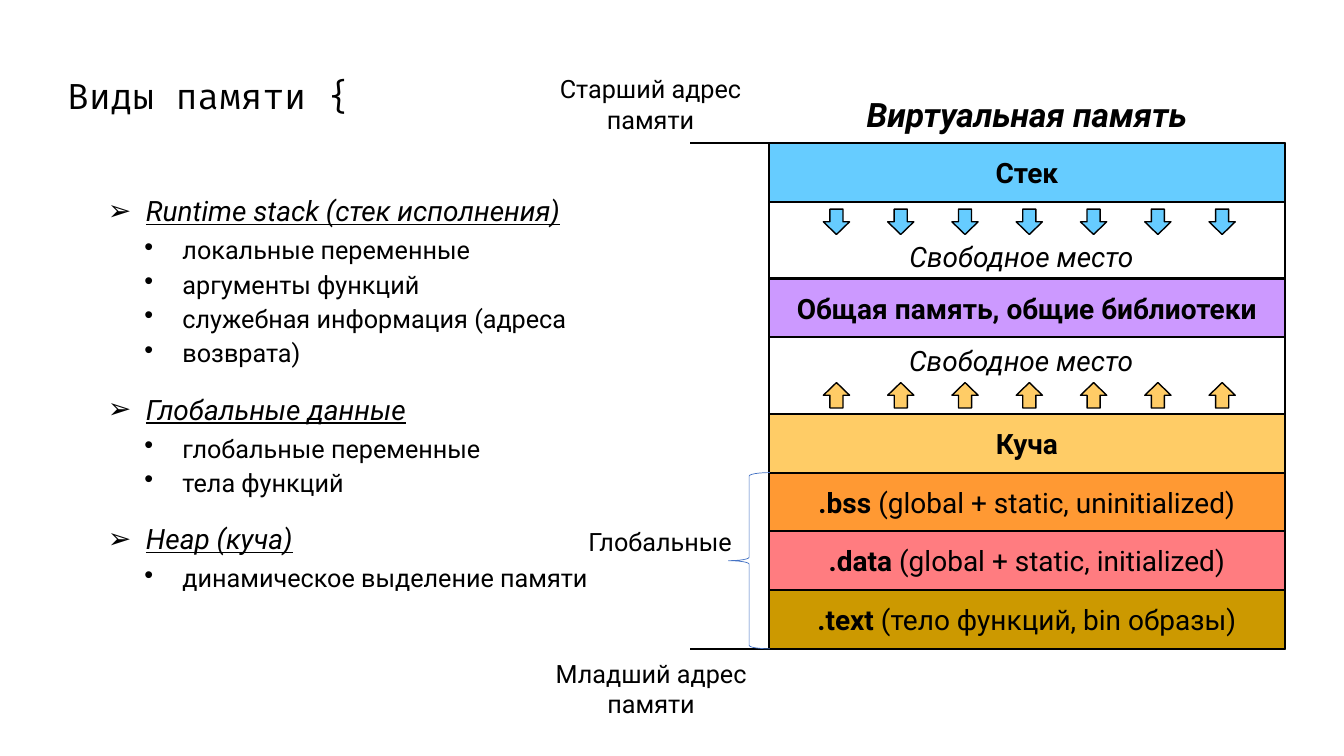
import dataclasses
import typing

import lxml.etree
import pptx
import pptx.dml.color
import pptx.enum.shapes
import pptx.enum.text
import pptx.oxml.ns
import pptx.util

Cm = pptx.util.Cm
Pt = pptx.util.Pt
SHAPE = pptx.enum.shapes.MSO_SHAPE
ALIGN = pptx.enum.text.PP_ALIGN
ANCHOR = pptx.enum.text.MSO_ANCHOR
AUTO_SIZE = pptx.enum.text.MSO_AUTO_SIZE


@dataclasses.dataclass(frozen=True)
class Theme:
    ink: str = "000000"
    stack: str = "66CCFF"
    shared: str = "CC99FF"
    heap: str = "FFCC66"
    bss: str = "FF9933"
    data: str = "FF7C80"
    text: str = "CC9900"
    brace: str = "4472C4"
    body_font: str = "Roboto"
    code_font: str = "Fira Code"
    title_size: float = 25.2
    heading_size: float = 24
    main_size: float = 20
    small_size: float = 18
    border: float = 1.5
    arrow_border: float = 1
    brace_border: float = 0.5


class Box(typing.NamedTuple):
    left: float
    top: float
    width: float
    height: float


class Segment(typing.NamedTuple):
    name: str
    detail: str
    color: str
    gap_after: float = 0


class Label(typing.NamedTuple):
    text: str
    box: Box
    size: float
    font: dict[str, typing.Any] = {}
    align: typing.Any = ALIGN.CENTER
    wrap: bool = True


class Topic(typing.NamedTuple):
    name: str
    items: list[str]


class ListLevel(typing.NamedTuple):
    bullet: str
    indent: float
    line_spacing: float
    font: dict[str, typing.Any]


THEME = Theme()
COLUMN_LEFT, COLUMN_TOP, COLUMN_WIDTH = 19.38, 3.61, 13.0
SEGMENT_HEIGHT, FREE_HEIGHT = 1.48, 1.93
ARROW_LEFT, ARROW_PITCH, ARROW_COUNT = 20.75, 1.62, 7
ADDRESS_LINE_LEFT = 17.4
HANGING = 0.96

SEGMENTS = [
    Segment("Стек", "", THEME.stack, FREE_HEIGHT),
    Segment("Общая память, общие библиотеки", "", THEME.shared, FREE_HEIGHT),
    Segment("Куча", "", THEME.heap),
    Segment(".bss ", "(global + static, uninitialized)", THEME.bss),
    Segment(".data ", "(global + static, initialized)", THEME.data),
    Segment(".text ", "(тело функций, bin образы)", THEME.text),
]
COLUMN_HEIGHT = sum(SEGMENT_HEIGHT + segment.gap_after for segment in SEGMENTS)
COLUMN_BOTTOM = COLUMN_TOP + COLUMN_HEIGHT
GLOBALS_HEIGHT = 3 * SEGMENT_HEIGHT

LABELS = [
    Label("Виртуальная память", Box(21.39, 2.24, 8.97, 1.27), THEME.heading_size,
          {"bold": True, "italic": True}),
    Label("Свободное место", Box(22.67, 5.92, 6.43, 1.12), THEME.main_size,
          {"italic": True}, ALIGN.LEFT, False),
    Label("Свободное место", Box(22.66, 8.54, 6.43, 1.12), THEME.main_size,
          {"italic": True}, ALIGN.LEFT, False),
    Label("Старший адрес памяти", Box(13.41, 1.73, 5.97, 1.8), THEME.small_size),
    Label("Младший адрес памяти", Box(13.21, 16.46, 6.4, 1.8), THEME.small_size),
    Label("Глобальные", Box(14.58, 13.13, 4.34, 1.02), THEME.small_size,
          {}, ALIGN.LEFT, False),
]
TOPICS = [
    Topic("Runtime stack (стек исполнения)",
          ["локальные переменные", "аргументы функций",
           "служебная информация (адреса", "возврата)"]),
    Topic("Глобальные данные", ["глобальные переменные", "тела функций"]),
    Topic("Heap (куча)", ["динамическое выделение памяти"]),
]
TOPIC_LEVEL = ListLevel("➢", 1.58, 1.07, {"size": Pt(THEME.main_size), "italic": True,
                                          "underline": True})
ITEM_LEVEL = ListLevel("•", 2.5, 0.3, {"size": Pt(THEME.small_size)})


def apply_format(target: typing.Any, values: dict[str, typing.Any]) -> None:
    for name, value in values.items():
        setattr(target, name, value)


def rgb(color: str) -> pptx.dml.color.RGBColor:
    return pptx.dml.color.RGBColor.from_string(color)


def add_run(paragraph, text: str, font: dict[str, typing.Any]) -> None:
    run = paragraph.add_run()
    run.text = text
    apply_format(run.font, {"name": THEME.body_font, **font})
    run.font.color.rgb = rgb(THEME.ink)


def add_shape(slide, kind, box: Box, fill: str | None, line: str, weight: float):
    shape = slide.shapes.add_shape(kind, *map(Cm, box))
    shape.shadow.inherit = False
    if fill:
        shape.fill.solid()
        shape.fill.fore_color.rgb = rgb(fill)
    else:
        shape.fill.background()
    shape.line.color.rgb = rgb(line)
    shape.line.width = Pt(weight)
    return shape


def add_label(slide, label: Label) -> None:
    frame = slide.shapes.add_textbox(*map(Cm, label.box)).text_frame
    apply_format(frame, {"word_wrap": label.wrap, "auto_size": AUTO_SIZE.SHAPE_TO_FIT_TEXT})
    frame.paragraphs[0].alignment = label.align
    add_run(frame.paragraphs[0], label.text, {"size": Pt(label.size), **label.font})


def add_title(slide) -> None:
    frame = slide.shapes.add_textbox(*map(Cm, Box(1.45, 1.85, 31.83, 1.24))).text_frame
    apply_format(frame, {"word_wrap": True, "vertical_anchor": ANCHOR.MIDDLE})
    frame.paragraphs[0].line_spacing = 0.9
    add_run(frame.paragraphs[0], "Виды памяти {",
            {"name": THEME.code_font, "size": Pt(THEME.title_size)})


def add_segments(slide) -> None:
    top = COLUMN_TOP
    for segment in SEGMENTS:
        box = Box(COLUMN_LEFT, top, COLUMN_WIDTH, SEGMENT_HEIGHT)
        shape = add_shape(slide, SHAPE.RECTANGLE, box, segment.color, THEME.ink, THEME.border)
        shape.text_frame.vertical_anchor = ANCHOR.MIDDLE
        paragraph = shape.text_frame.paragraphs[0]
        paragraph.alignment = ALIGN.CENTER
        size = Pt(THEME.main_size)
        add_run(paragraph, segment.name, {"size": size, "bold": True})
        if segment.detail:
            add_run(paragraph, segment.detail, {"size": size, "bold": False})
        top += SEGMENT_HEIGHT + segment.gap_after


def add_arrow_row(slide, top: float, color: str, rotation: float) -> None:
    for index in range(ARROW_COUNT):
        box = Box(ARROW_LEFT + index * ARROW_PITCH, top, 0.66, 0.64)
        arrow = add_shape(slide, SHAPE.DOWN_ARROW, box, color, THEME.ink, THEME.arrow_border)
        arrow.rotation = rotation


def add_address_line(slide, height: float) -> None:
    line = slide.shapes.add_connector(
        pptx.enum.shapes.MSO_CONNECTOR.STRAIGHT,
        Cm(ADDRESS_LINE_LEFT), Cm(height), Cm(COLUMN_LEFT), Cm(height))
    line.line.color.rgb = rgb(THEME.ink)
    line.line.width = Pt(THEME.border)
    lxml.etree.SubElement(line._element.spPr, pptx.oxml.ns.qn("a:effectLst"))


def add_topics(slide) -> None:
    frame = slide.shapes.add_textbox(*map(Cm, Box(1.85, 4.7, 16.51, 10.59))).text_frame
    frame.word_wrap = True
    rows = [row for topic in TOPICS
            for row in [(topic.name, TOPIC_LEVEL), *((item, ITEM_LEVEL) for item in topic.items)]]
    for index, (text, level) in enumerate(rows):
        paragraph = frame.add_paragraph() if index else frame.paragraphs[0]
        apply_format(paragraph, {
            "alignment": ALIGN.JUSTIFY, "line_spacing": level.line_spacing,
            "space_before": Pt(10 if index else 0), "space_after": Pt(8)})
        properties = paragraph._p.get_or_add_pPr()
        properties.set("marL", str(Cm(level.indent)))
        properties.set("indent", str(-Cm(HANGING)))
        for tag, key, value in (("a:buFont", "typeface", "Arial"),
                                ("a:buChar", "char", level.bullet)):
            lxml.etree.SubElement(properties, pptx.oxml.ns.qn(tag)).set(key, value)
        add_run(paragraph, text, level.font)


def main() -> None:
    presentation = pptx.Presentation()
    apply_format(presentation, {"slide_width": Cm(33.87), "slide_height": Cm(19.05)})
    slide = presentation.slides.add_slide(presentation.slide_layouts[6])
    add_title(slide)
    column = Box(COLUMN_LEFT, COLUMN_TOP, COLUMN_WIDTH, COLUMN_HEIGHT)
    add_shape(slide, SHAPE.RECTANGLE, column, None, THEME.ink, THEME.border)
    add_segments(slide)
    add_arrow_row(slide, 5.27, THEME.stack, 0)
    add_arrow_row(slide, 9.64, THEME.heap, 180)
    for height in (COLUMN_TOP, COLUMN_BOTTOM):
        add_address_line(slide, height)
    add_topics(slide)
    brace = Box(18.36, COLUMN_BOTTOM - GLOBALS_HEIGHT, 1.04, GLOBALS_HEIGHT)
    add_shape(slide, SHAPE.LEFT_BRACE, brace, None, THEME.brace, THEME.brace_border)
    for label in LABELS:
        add_label(slide, label)
    presentation.save("out.pptx")


if __name__ == "__main__":
    main()
